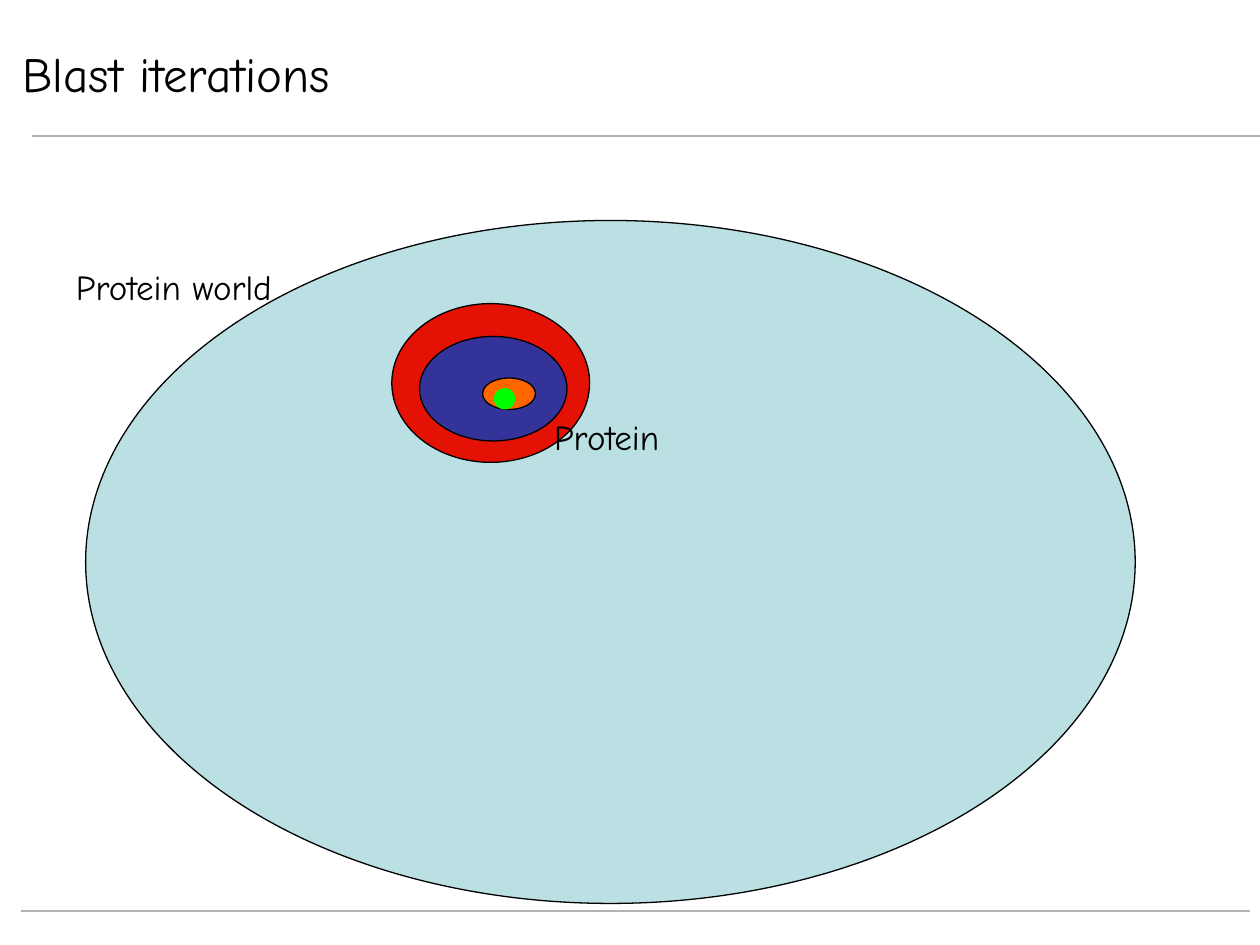
from dataclasses import dataclass
from typing import Optional

from pptx import Presentation
from pptx.dml.color import RGBColor
from pptx.enum.shapes import MSO_CONNECTOR, MSO_SHAPE
from pptx.enum.text import MSO_ANCHOR, MSO_AUTO_SIZE, PP_ALIGN
from pptx.oxml.ns import qn
from pptx.slide import Slide
from pptx.util import Inches, Pt

OVAL = MSO_SHAPE.OVAL
RECTANGLE = MSO_SHAPE.RECTANGLE
STRAIGHT = MSO_CONNECTOR.STRAIGHT
MIDDLE = MSO_ANCHOR.MIDDLE
FIT_TEXT = MSO_AUTO_SIZE.SHAPE_TO_FIT_TEXT
LEFT, CENTER = PP_ALIGN.LEFT, PP_ALIGN.CENTER

FONT = "Comic Neue"
BLACK, WHITE, GRAY = "000000", "FFFFFF", "B2B2B2"


@dataclass
class Region:
    left: float
    top: float
    width: float
    height: float
    fill: str
    outline: Optional[str] = BLACK


@dataclass
class Label:
    text: str
    left: float
    top: float
    width: float
    height: float = 0.43


@dataclass
class Rule:
    left: float
    right: float
    y: float


RULES = [Rule(0.25, 10, 1.08), Rule(0.17, 9.92, 7.23)]
TITLE_AREA = Region(0.08, 0.33, 7.83, 0.5, WHITE, WHITE)
PROTEIN_WORLD = Region(0.68, 1.75, 8.33, 5.42, "BBE0E3")
ITERATIONS = [
    Region(3.11, 2.41, 1.57, 1.26, "E31205"),
    Region(3.33, 2.67, 1.17, 0.83, "333399"),
    Region(3.83, 3, 0.42, 0.25, "FF6600"),
]
PROTEIN = Region(3.92, 3.08, 0.17, 0.17, "00FF00", None)
WORLD_LABEL = Label("Protein world", 0.42, 2.06, 1.92)
PROTEIN_LABEL = Label("Protein", 4.25, 3.25, 1.13)


def color(code: str) -> RGBColor:
    return RGBColor.from_string(code)


def draw_rule(slide: Slide, rule: Rule) -> None:
    line = slide.shapes.add_connector(
        STRAIGHT, Inches(rule.left), Inches(rule.y), Inches(rule.right), Inches(rule.y)
    )
    line.line.color.rgb = color(GRAY)
    line.line.width = Pt(1.5)
    properties = line._element.spPr
    properties.append(properties.makeelement(qn("a:effectLst"), {}))


def draw_region(slide: Slide, region: Region, geometry=OVAL):
    shape = slide.shapes.add_shape(
        geometry,
        Inches(region.left),
        Inches(region.top),
        Inches(region.width),
        Inches(region.height),
    )
    shape.shadow.inherit = False
    shape.fill.solid()
    shape.fill.fore_color.rgb = color(region.fill)
    if region.outline:
        shape.line.color.rgb = color(region.outline)
        shape.line.width = Pt(0.75)
    else:
        shape.line.fill.background()
    return shape


def write(frame, text: str, size: float, alignment: PP_ALIGN) -> None:
    paragraph = frame.paragraphs[0]
    paragraph.text = text
    paragraph.alignment = alignment
    paragraph.font.name = FONT
    paragraph.font.size = Pt(size)
    paragraph.font.color.rgb = color(BLACK)


def draw_label(slide: Slide, label: Label) -> None:
    frame = slide.shapes.add_textbox(
        Inches(label.left), Inches(label.top), Inches(label.width), Inches(label.height)
    ).text_frame
    frame.word_wrap = False
    frame.auto_size = FIT_TEXT
    write(frame, label.text, 20, CENTER)


def draw_title(slide: Slide, text: str) -> None:
    frame = draw_region(slide, TITLE_AREA, RECTANGLE).text_frame
    frame.word_wrap = True
    frame.vertical_anchor = MIDDLE
    write(frame, text, 28, LEFT)


def main() -> None:
    presentation = Presentation()
    presentation.slide_width = Inches(10)
    presentation.slide_height = Inches(7.5)
    slide = presentation.slides.add_slide(presentation.slide_layouts[6])

    for rule in RULES:
        draw_rule(slide, rule)
    draw_title(slide, "Blast iterations")
    draw_region(slide, PROTEIN_WORLD)
    draw_label(slide, WORLD_LABEL)
    for iteration in ITERATIONS:
        draw_region(slide, iteration)
    draw_label(slide, PROTEIN_LABEL)
    draw_region(slide, PROTEIN)

    presentation.save("out.pptx")


if __name__ == "__main__":
    main()
